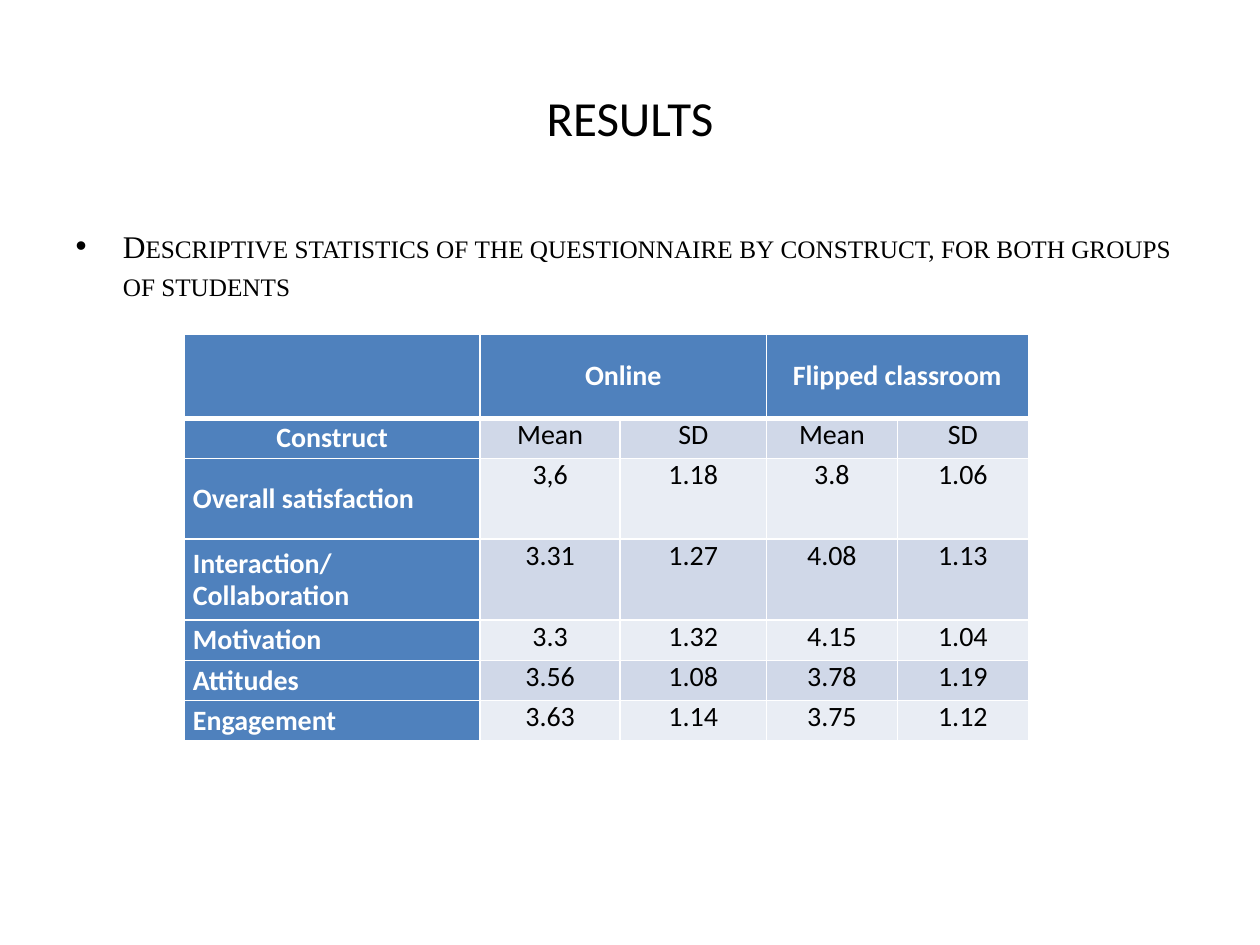
import dataclasses
import typing

import pptx
import pptx.dml.color
import pptx.enum.text
import pptx.oxml
import pptx.oxml.ns
import pptx.util

Cm = pptx.util.Cm
Pt = pptx.util.Pt
Align = pptx.enum.text.PP_ALIGN
Anchor = pptx.enum.text.MSO_ANCHOR

BLUE, WHITE, BLACK = "4F81BD", "FFFFFF", "000000"
BANDS = ("D0D8E8", "E9EDF4")
WIDTHS = (5.97, 2.82, 2.95, 2.64, 2.64)
THICK, THIN = 3, 1


@dataclasses.dataclass
class Row:
    label: str
    values: tuple[str, ...]
    height: float
    loose: bool = True  # values set with the labels' spacing


ROWS = (
    Row("Construct", ("Mean", "SD", "Mean", "SD"), 0.81, False),
    Row("Overall satisfaction", ("3,6", "1.18", "3.8", "1.06"), 1.63),
    Row("Interaction/ Collaboration", ("3.31", "1.27", "4.08", "1.13"), 1.63, False),
    Row("Motivation", ("3.3", "1.32", "4.15", "1.04"), 0.81),
    Row("Attitudes", ("3.56", "1.08", "3.78", "1.19"), 0.81),
    Row("Engagement", ("3.63", "1.14", "3.75", "1.12"), 0.81),
)


def color(code: str) -> pptx.dml.color.RGBColor:
    return pptx.dml.color.RGBColor.from_string(code)


def style(para: typing.Any, face: str, size: float, code: str, bold: bool = False) -> None:
    font = para.font
    font.name, font.size, font.bold = face, Pt(size), bold
    font.color.rgb = color(code)


def place(shape: typing.Any, left: float, top: float, width: float, height: float) -> None:
    shape.left, shape.top = Cm(left), Cm(top)
    shape.width, shape.height = Cm(width), Cm(height)


def paint(cell: typing.Any, code: str, top: int = THIN, base: int = THIN) -> None:
    """Give a cell its white borders and its fill."""
    props = cell._tc.get_or_add_tcPr()
    for side, width in zip("LRTB", (THIN, THIN, top, base)):
        props.append(pptx.oxml.parse_xml(
            f'<a:ln{side} {pptx.oxml.ns.nsdecls("a")} w="{Pt(width)}"><a:solidFill>'
            f'<a:srgbClr val="{WHITE}"/></a:solidFill></a:ln{side}>'))
    cell.fill.solid()
    cell.fill.fore_color.rgb = color(code)


def write(cell: typing.Any, text: str, head: bool, align: typing.Any,
          loose: bool = False, inset: float = 0.18) -> None:
    cell.text = text
    cell.margin_left = cell.margin_right = Cm(inset)
    cell.margin_top = cell.margin_bottom = 0
    cell.vertical_anchor = Anchor.MIDDLE if head else Anchor.TOP
    para = cell.text_frame.paragraphs[0]
    para.alignment = align
    if loose:
        para.line_spacing, para.space_after = 0.95, Pt(6)
    style(para, "Calibri", 16, WHITE if head else BLACK, head)


def draw(slide: typing.Any) -> None:
    """Build the statistics table."""
    heights = [1.7] + [row.height for row in ROWS]
    table = slide.shapes.add_table(
        len(heights), len(WIDTHS), Cm(3.71), Cm(6.73),
        Cm(sum(WIDTHS)), Cm(sum(heights))).table
    for col, width in zip(table.columns, WIDTHS):
        col.width = Cm(width)
    for line, height in zip(table.rows, heights):
        line.height = Cm(height)

    # Group headings, each over two columns
    for col in range(len(WIDTHS)):
        paint(table.cell(0, col), BLUE, base=THICK)
    for col, group in ((1, "Online"), (3, "Flipped classroom")):
        cell = table.cell(0, col)
        cell.merge(table.cell(0, col + 1))
        write(cell, group, True, Align.CENTER, inset=0)

    # Labels and banded values
    for num, row in enumerate(ROWS):
        first = num == 0
        top = THICK if first else THIN
        label = table.cell(num + 1, 0)
        paint(label, BLUE, top)
        write(label, row.label, True, Align.CENTER if first else Align.LEFT, not first)
        for col, value in enumerate(row.values, 1):
            cell = table.cell(num + 1, col)
            paint(cell, BANDS[num % 2], top)
            write(cell, value, False, Align.CENTER, row.loose)


def main() -> None:
    deck = pptx.Presentation()
    deck.slide_width, deck.slide_height = Cm(25.4), Cm(19.05)
    slide = deck.slides.add_slide(deck.slide_layouts[1])

    # Title
    title = slide.shapes.title
    place(title, 1.27, 0.76, 22.86, 3.18)
    title.text = "RESULTS"
    style(title.text_frame.paragraphs[0], "Calibri", 28, BLACK)

    # Bullet in small capitals
    body = slide.placeholders[1]
    place(body, 1.27, 4.45, 22.86, 14.07)
    body.text = ("Descriptive statistics of the questionnaire by construct, "
                 "for both groups of students")
    para = body.text_frame.paragraphs[0]
    style(para, "Times New Roman", 18, BLACK)
    para.runs[0]._r.get_or_add_rPr().set("cap", "small")

    draw(slide)
    deck.save("out.pptx")


if __name__ == "__main__":
    main()
